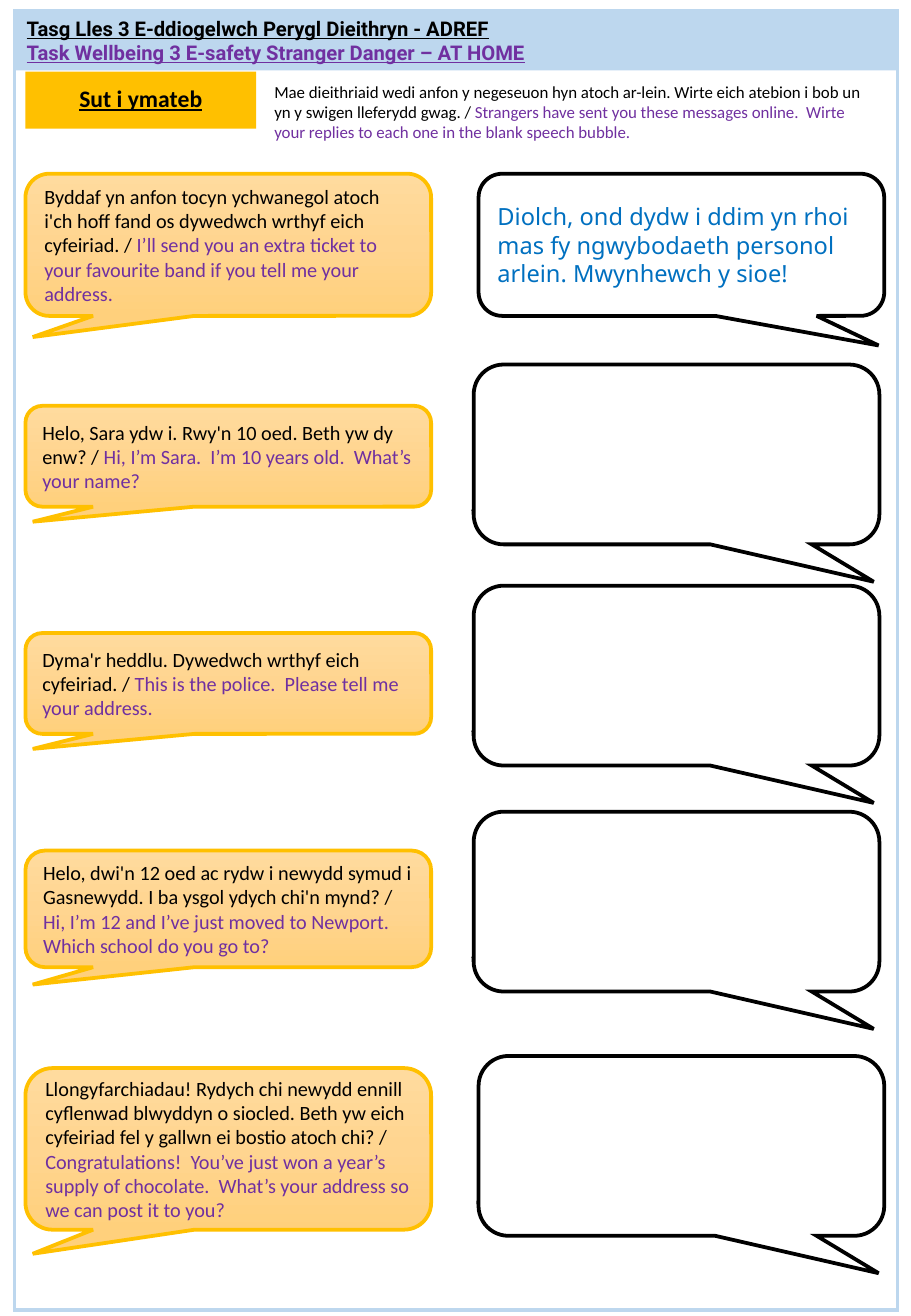
from copy import deepcopy
from typing import NamedTuple

from lxml import etree
from pptx import Presentation
from pptx.dml.color import RGBColor
from pptx.enum.shapes import MSO_SHAPE
from pptx.enum.text import MSO_ANCHOR, MSO_AUTO_SIZE, PP_ALIGN
from pptx.oxml.ns import qn
from pptx.util import Pt

PX = 9144  # EMU in one px, 100 px to the inch
RECT = MSO_SHAPE.RECTANGLE
BUBBLE = MSO_SHAPE.ROUNDED_RECTANGULAR_CALLOUT
TOP, MIDDLE = MSO_ANCHOR.TOP, MSO_ANCHOR.MIDDLE
LEFT, CENTER = PP_ALIGN.LEFT, PP_ALIGN.CENTER
NO_FIT, GROW = MSO_AUTO_SIZE.NONE, MSO_AUTO_SIZE.SHAPE_TO_FIT_TEXT

BLACK = RGBColor(0x00, 0x00, 0x00)
WHITE = RGBColor(0xFF, 0xFF, 0xFF)
PURPLE = RGBColor(0x70, 0x30, 0xA0)
BLUE = RGBColor(0x00, 0x70, 0xC0)
PALE = RGBColor(0xBD, 0xD7, 0xEE)
GOLD = RGBColor(0xFF, 0xC0, 0x00)
PEACH = (RGBColor(0xFF, 0xDB, 0x9E), RGBColor(0xFF, 0xD5, 0x90),
         RGBColor(0xFF, 0xD0, 0x7C))

ASK_TAIL = (-0.482, 0.649, 0.167)
REPLY_TAIL = (0.486, 0.708, 0.167)
WIDE = 334


class Box(NamedTuple):
    left: int
    top: int
    width: int
    height: int


class Part(NamedTuple):
    text: str
    color: RGBColor = BLACK


class Style(NamedTuple):
    font: str
    size: int
    strong: bool = False


class Chat(NamedTuple):
    welsh: str
    english: str
    ask: Box
    reply: Box
    answer: str = ""


HEAD = Style("Roboto", 12, True)
LABEL = Style("Calibri", 14, True)
INTRO = Style("Calibri", 10)
ASK = Style("Calibri", 12)
REPLY = Style("Noto Sans", 14)

CHATS = [
    Chat("Byddaf yn anfon tocyn ychwanegol atoch i'ch hoff fand os dywedwch wrthyf eich cyfeiriad. / ",
         "I’ll send you an extra ticket to your favourite band if you tell me your address.",
         Box(21, 143, WIDE, 117), Box(394, 143, WIDE, 117),
         "Diolch, ond dydw i ddim yn rhoi mas fy ngwybodaeth personol arlein. Mwynhewch y sioe!"),
    Chat("Helo, Sara ydw i. Rwy'n 10 oed. Beth yw dy enw? / ",
         "Hi, I’m Sara.  I’m 10 years old.  What’s your name?",
         Box(21, 334, WIDE, 83), Box(390, 300, WIDE, 148)),
    Chat("Dyma'r heddlu. Dywedwch wrthyf eich cyfeiriad. / ",
         "This is the police.  Please tell me your address.",
         Box(21, 521, WIDE, 83), Box(390, 482, WIDE, 148)),
    Chat("Helo, dwi'n 12 oed ac rydw i newydd symud i Gasnewydd. I ba ysgol ydych chi'n mynd? / ",
         "Hi, I’m 12 and I’ve just moved to Newport.  Which school do you go to?",
         Box(21, 700, WIDE, 96), Box(390, 668, WIDE, 148)),
    Chat("Llongyfarchiadau! Rydych chi newydd ennill cyflenwad blwyddyn o siocled. "
         "Beth yw eich cyfeiriad fel y gallwn ei bostio atoch chi? / ",
         "Congratulations!  You’ve just won a year’s supply of chocolate.  "
         "What’s your address so we can post it to you?",
         Box(21, 879, WIDE, 133), Box(394, 869, WIDE, 148)),
]


def scale(box: Box) -> list[int]:
    return [n * PX for n in box]


def write(frame, lines: list[list[Part]], style: Style, align=LEFT,
          anchor=TOP, fit=NO_FIT) -> None:
    """Fill a text frame, one paragraph a line, run by run."""
    frame.word_wrap = True
    frame.auto_size = fit
    frame.vertical_anchor = anchor
    for i, parts in enumerate(lines):
        para = frame.paragraphs[0] if i == 0 else frame.add_paragraph()
        para.alignment = align
        for part in parts:
            run = para.add_run()
            run.text = part.text
            font = run.font
            font.name, font.size = style.font, Pt(style.size)
            font.bold = font.underline = style.strong
            font.color.rgb = part.color


def blend(shape, colors: tuple) -> None:
    """Fill a shape with three colours from top to bottom."""
    shape.fill.gradient()
    shape.fill.gradient_angle = 270
    stops = shape._element.spPr.find(".//" + qn("a:gsLst"))
    stops.insert(1, deepcopy(stops[0]))
    for i, (stop, color) in enumerate(zip(shape.fill.gradient_stops, colors)):
        stop.position = i / 2
        stop.color.rgb = color


def draw(slide, kind, box: Box, fill=None, line=None):
    """Add a shape with a plain, blended or empty fill."""
    shape = slide.shapes.add_shape(kind, *scale(box))
    shape.shadow.inherit = False
    if fill is None:
        shape.fill.background()
    elif isinstance(fill, RGBColor):
        shape.fill.solid()
        shape.fill.fore_color.rgb = fill
    else:
        blend(shape, fill)
    if line is None:
        shape.line.fill.background()
    else:
        shape.line.color.rgb = line
        shape.line.width = Pt(2.25)
        edge = shape._element.spPr.find(qn("a:ln"))
        etree.SubElement(edge, qn("a:miter"), lim="800000")
    return shape


def bubble(slide, box: Box, tail: tuple, fill, line: RGBColor,
           parts: list[Part], style: Style) -> None:
    shape = draw(slide, BUBBLE, box, fill, line)
    for i, value in enumerate(tail):
        shape.adjustments[i] = value
    if parts:
        write(shape.text_frame, [parts], style, anchor=MIDDLE)


def note(slide, box: Box, parts: list[Part], style: Style, align=LEFT) -> None:
    frame = slide.shapes.add_textbox(*scale(box)).text_frame
    write(frame, [parts], style, align, fit=GROW)


def main() -> None:
    deck = Presentation()
    deck.slide_width, deck.slide_height = 750 * PX, 1083 * PX
    slide = deck.slides.add_slide(deck.slide_layouts[5])

    # Header band, with the title brought in front of it
    draw(slide, RECT, Box(12, 10, 727, 48), PALE)
    title = slide.shapes.title
    title.left, title.top, title.width, title.height = scale(Box(12, 8, 586, 50))
    write(title.text_frame,
          [[Part("Tasg Lles 3 E-ddiogelwch Perygl Dieithryn - ADREF")],
           [Part("Task Wellbeing 3 E-safety Stranger Danger – AT HOME", PURPLE)]],
          HEAD)
    slide.shapes._spTree.append(title._element)

    # Page frame
    draw(slide, RECT, Box(12, 9, 727, 1069), line=PALE)

    # Label and instructions
    draw(slide, RECT, Box(21, 59, 190, 47), GOLD)
    note(slide, Box(16, 64, 200, 34), [Part("Sut i ymateb")], LABEL, CENTER)
    note(slide, Box(216, 62, 517, 61),
         [Part("Mae dieithriaid wedi anfon y negeseuon hyn atoch ar-lein. "
               "Wirte eich atebion i bob un yn y swigen lleferydd gwag. / "),
          Part("Strangers have sent you these messages online.  "
               "Wirte your replies to each one in the blank speech bubble.", PURPLE)],
         INTRO)

    # Messages and replies
    for chat in CHATS:
        bubble(slide, chat.ask, ASK_TAIL, PEACH, GOLD,
               [Part(chat.welsh), Part(chat.english, PURPLE)], ASK)
        answer = [Part(chat.answer, BLUE)] if chat.answer else []
        bubble(slide, chat.reply, REPLY_TAIL, WHITE, BLACK, answer, REPLY)

    deck.save("out.pptx")


if __name__ == "__main__":
    main()
